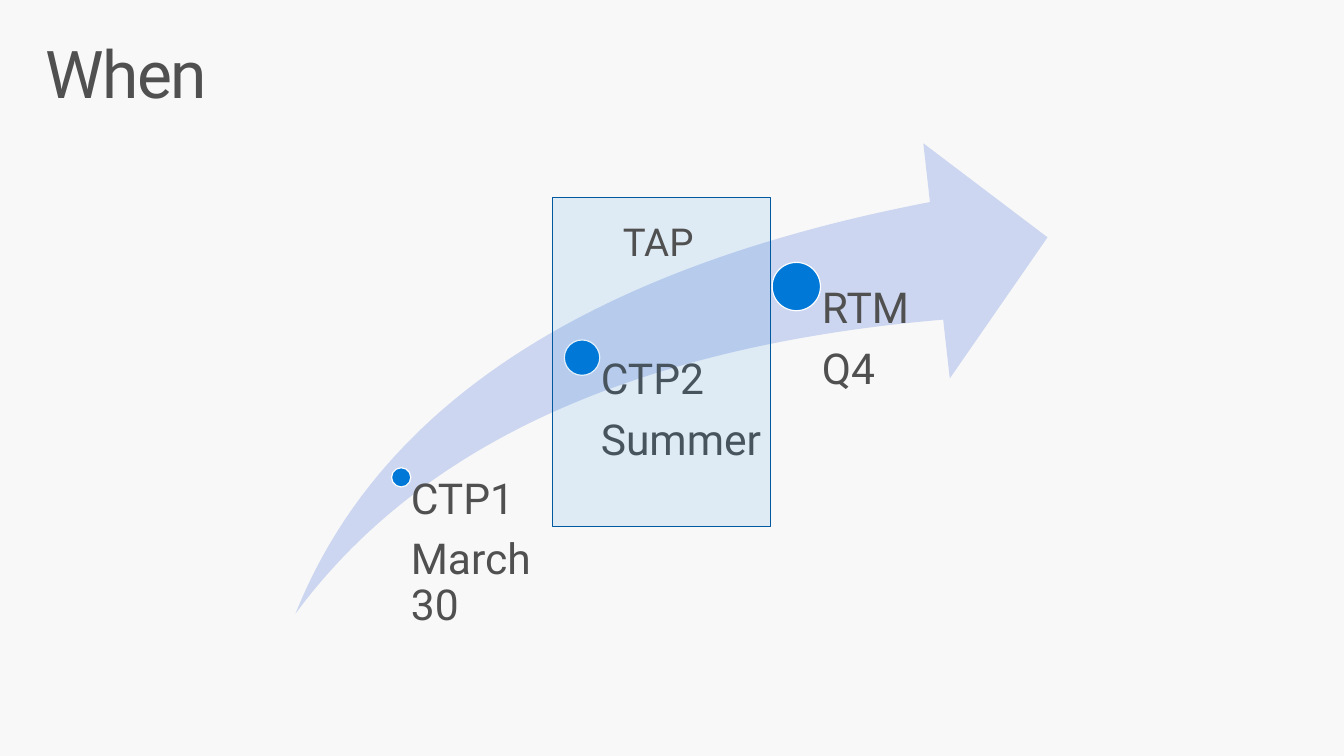
from lxml import etree
from pptx import Presentation
from pptx.dml.color import RGBColor
from pptx.enum.shapes import MSO_SHAPE
from pptx.enum.text import PP_ALIGN
from pptx.oxml.ns import qn
from pptx.util import Pt

SWOOSH, OVAL, RECT = MSO_SHAPE.SWOOSH_ARROW, MSO_SHAPE.OVAL, MSO_SHAPE.RECTANGLE
LEFT, CENTER = PP_ALIGN.LEFT, PP_ALIGN.CENTER
COLORS = {"back": "F8F8F8", "text": "505050", "arrow": "CCD6F0",
          "blue": "0078D7", "edge": "00599F", "white": "FFFFFF"}


def add_form(kind, box, fill, line=None):
    form = slide.shapes.add_shape(kind, *[Pt(n) for n in box])
    form.shadow.inherit = False
    form.fill.solid()
    form.fill.fore_color.rgb = RGBColor.from_string(COLORS[fill])
    if line:
        form.line.color.rgb = RGBColor.from_string(COLORS[line])
        form.line.width = Pt(0.85)
    else:
        form.line.fill.background()
    return form


def add_text(box, lines, size, pad, space=0.9, after=0, align=LEFT):
    """Add a text box; pad holds the side and the top inset. Return the last run."""
    frame = slide.shapes.add_textbox(*[Pt(n) for n in box]).text_frame
    frame.word_wrap = True
    frame.margin_left, frame.margin_top = Pt(pad[0]), Pt(pad[1])
    frame.margin_right = frame.margin_bottom = 0
    if align == CENTER:
        frame.margin_right = frame.margin_left
    for i, line in enumerate(lines):
        para = frame.add_paragraph() if i else frame.paragraphs[0]
        para.alignment = align
        para.line_spacing = space
        para.space_after = Pt(after)
        run = para.add_run()
        run.text = line
        run.font.name = "Roboto"
        run.font.size = Pt(size)
        run.font.color.rgb = RGBColor.from_string(COLORS["text"])
    return run


deck = Presentation()
deck.slide_width, deck.slide_height = Pt(979.2), Pt(550.8)
slide = deck.slides.add_slide(deck.slide_layouts[6])
slide.background.fill.solid()
slide.background.fill.fore_color.rgb = RGBColor.from_string(COLORS["back"])

title = add_text((21.6, 23, 936, 72), ["When"], 48, (11.5, 7.2))
title.font._element.set("spc", "-100")

arrow = add_form(SWOOSH, (215.3, 104.4, 547.9, 342.7), "arrow")
arrow.adjustments[0] = arrow.adjustments[1] = 0.25

# Each label starts at the centre of its dot and ends at the arrow's foot
foot = 447.1
stages = [
    (292.3, 347.8, 14, 127.4, 7.2, ["CTP1", "March 30"]),
    (424.1, 260.6, 25.8, 131.8, 13.7, ["CTP2", "Summer"]),
    (580.2, 208.8, 35.2, 131.8, 18.7, ["RTM", "Q4"]),
]
for x, y, size, width, pad, lines in stages:
    add_form(OVAL, (x - size / 2, y - size / 2, size, size), "blue", "white")
    add_text((x, y, width, foot - y), lines, 31, (pad, 0), after=10.8)

phase = add_form(RECT, (402.5, 144, 159.1, 239.8), "blue", "edge")
tint = phase.fill._xPr.find(qn("a:solidFill"))[0]
etree.SubElement(tint, qn("a:alpha")).set("val", "10000")
add_text((399.6, 155.5, 159.8, 41), ["TAP"], 28, (7.2, 3.6), space=1, align=CENTER)

deck.save("out.pptx")
